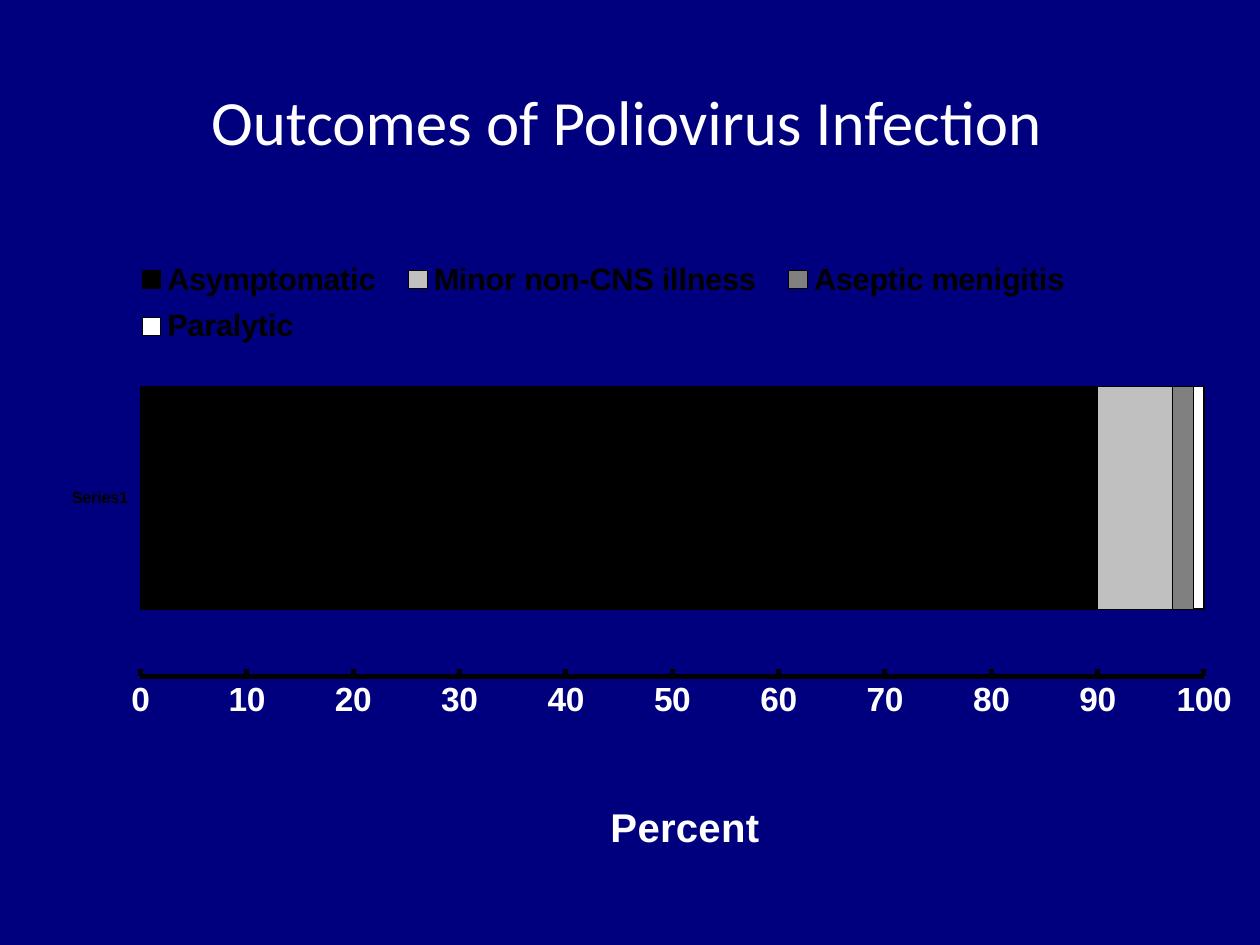
from lxml import etree
from pptx import Presentation
from pptx import util as u
from pptx.chart.data import CategoryChartData
from pptx.dml.color import RGBColor
from pptx.enum import chart as ch, text
from pptx.oxml.ns import qn


def rgb(value):
    return RGBColor.from_string(value)


def set_font(font, size, color, name="Arial", bold=True):
    font.size, font.bold, font.name = u.Pt(size), bold, name
    font.color.rgb = rgb(color)


def set_line(line, color, width):
    line.color.rgb = rgb(color)
    line.width = u.Pt(width)


def set_layout(parent, index, **places):
    for old in parent.findall(qn("c:layout")):
        parent.remove(old)
    layout = etree.Element(qn("c:layout"))
    manual = etree.SubElement(layout, qn("c:manualLayout"))
    if parent.tag == qn("c:plotArea"):
        etree.SubElement(manual, qn("c:layoutTarget")).set("val", "inner")
    for key in ("xMode", "yMode"):
        etree.SubElement(manual, qn(f"c:{key}")).set("val", "edge")
    for key, value in places.items():
        etree.SubElement(manual, qn(f"c:{key}")).set("val", str(value))
    parent.insert(index, layout)


class Deck:
    BACK, LIGHT, DARK = "00007F", "FFFFFF", "000000"

    def __init__(self):
        self.prs = Presentation()
        self.prs.slide_width, self.prs.slide_height = u.Cm(25.4), u.Cm(19.05)
        self.s = None

    def slide(self):
        self.s = self.prs.slides.add_slide(self.prs.slide_layouts[5])
        fill = self.s.background.fill
        fill.solid()
        fill.fore_color.rgb = rgb(self.BACK)

    def title(self, words, left, top, width, height):
        sp = self.s.shapes.title
        sp.left, sp.top = u.Cm(left), u.Cm(top)
        sp.width, sp.height = u.Cm(width), u.Cm(height)
        tf = sp.text_frame
        tf.margin_left = tf.margin_right = tf.margin_top = tf.margin_bottom = 0
        tf.word_wrap = True
        tf.auto_size = text.MSO_AUTO_SIZE.NONE
        tf.vertical_anchor = text.MSO_ANCHOR.BOTTOM
        p = tf.paragraphs[0]
        p.alignment = text.PP_ALIGN.CENTER
        p.line_spacing = 0.9
        r = p.add_run()
        r.text = words
        set_font(r.font, 36, self.LIGHT, "Calibri", False)

    def stacked_bar(self, category, series, left, top, width, height):
        data = CategoryChartData()
        data.categories = [category]
        for name, value, *_ in series:
            data.add_series(name, [value])
        frame = self.s.shapes.add_chart(
            ch.XL_CHART_TYPE.BAR_STACKED,
            u.Cm(left), u.Cm(top), u.Cm(width), u.Cm(height), data)
        chart = frame.chart
        chart.has_title = False
        set_font(chart.font, 17.2, self.LIGHT)
        plot = chart.plots[0]
        plot.gap_width, plot.overlap = 60, 100
        plot.vary_by_categories = False
        for item, (_, _, color, width) in zip(plot.series, series):
            item.format.fill.solid()
            item.format.fill.fore_color.rgb = rgb(color)
            set_line(item.format.line, self.DARK, width)
        return chart

    def category_axis(self, axis):
        axis.major_tick_mark = ch.XL_TICK_MARK.NONE
        axis.tick_label_position = ch.XL_TICK_LABEL_POSITION.LOW
        axis.format.line.fill.background()
        set_font(axis.tick_labels.font, 9.3, self.DARK)

    def value_axis(self, axis, words):
        axis.minimum_scale, axis.maximum_scale, axis.major_unit = 0, 100, 10
        axis.has_major_gridlines = False
        axis.major_tick_mark = ch.XL_TICK_MARK.INSIDE
        set_line(axis.format.line, self.DARK, 2.86)
        set_font(axis.tick_labels.font, 19.1, self.LIGHT)
        r = axis.axis_title.text_frame.paragraphs[0].add_run()
        r.text = words
        set_font(r.font, 22.9, self.LIGHT)
        title = axis.axis_title._element
        set_layout(title, 1, x=0.45, y=0.88)

    def legend(self, chart):
        chart.has_legend = True
        legend = chart.legend
        legend.position = ch.XL_LEGEND_POSITION.RIGHT
        legend.include_in_layout = False
        set_font(legend.font, 17.6, self.DARK)
        set_layout(legend._element, 1, x=0.04, y=0.06, w=0.82, h=0.16)


def main():
    deck = Deck()
    deck.slide()
    deck.title("Outcomes of Poliovirus Infection", 0.58, 1.68, 24.1, 1.52)
    outcomes = [
        ("Asymptomatic", 90, "000000", 0.25),
        ("Minor non-CNS illness", 7, "C0C0C0", 0.25),
        ("Aseptic menigitis", 2, "808080", 0.25),
        ("Paralytic", 1, "FFFFFF", 0.95),
    ]
    chart = deck.stacked_bar("Series1", outcomes, 1.45, 4.24, 23.8, 13.36)
    deck.category_axis(chart.category_axis)
    deck.value_axis(chart.value_axis, "Percent")
    deck.legend(chart)
    plot_area = chart._chartSpace.chart.plotArea
    set_layout(plot_area, 0, x=0.058, y=0.165, w=0.901, h=0.538)
    deck.prs.save("out.pptx")


if __name__ == "__main__":
    main()
